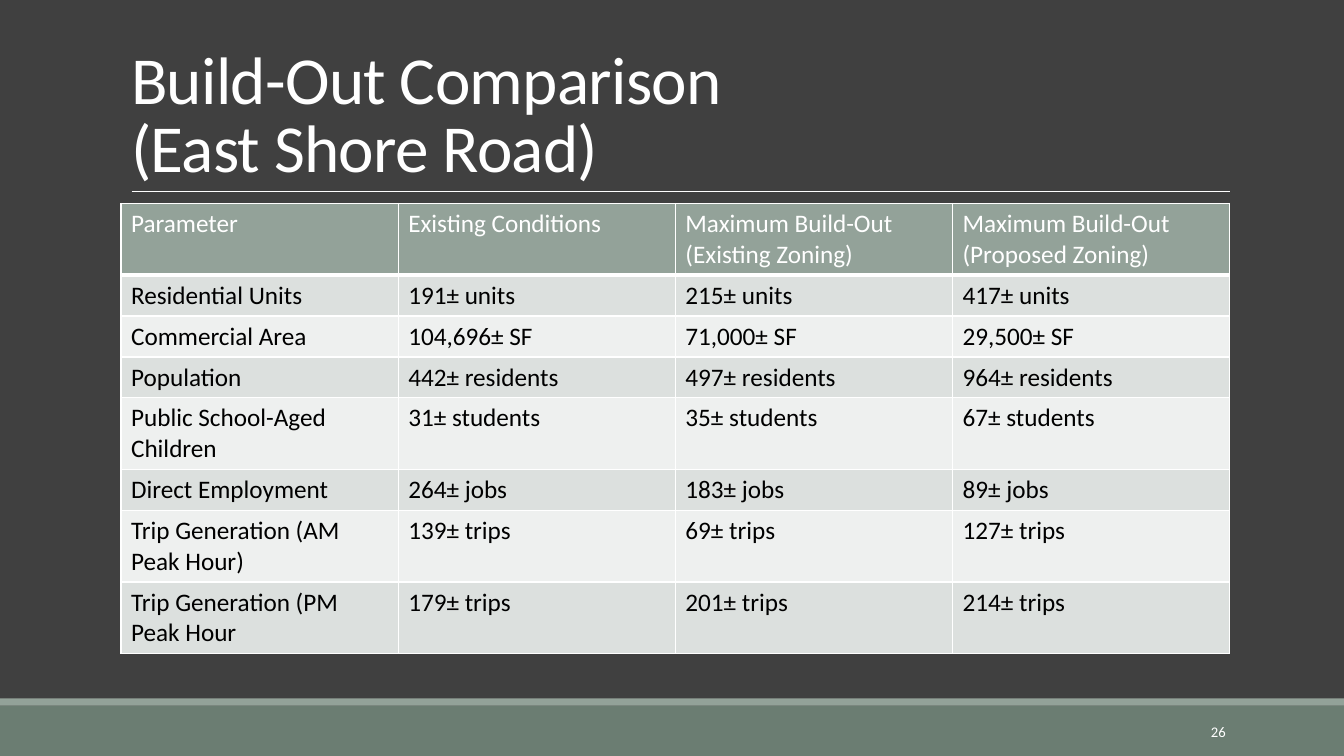
from dataclasses import dataclass

from lxml.etree import SubElement
from pptx import Presentation
from pptx.dml.color import RGBColor
from pptx.enum.shapes import MSO_CONNECTOR, MSO_SHAPE
from pptx.enum.text import MSO_ANCHOR, MSO_AUTO_SIZE, PP_ALIGN
from pptx.oxml.ns import qn
from pptx.slide import Slide
from pptx.table import _Cell
from pptx.text.text import TextFrame
from pptx.util import Cm, Pt

WHITE = "FFFFFF"
SAGE = "93A299"
BANDS = ["DCE0DE", "EEF0EF"]
LEFT, WIDTH = 3.05, 27.94


@dataclass
class Bar:
    top: float
    height: float
    fill: str


BARS = [Bar(17.78, 1.27, "6B7D72"), Bar(17.6, 0.18, SAGE)]

ROWS = [
    ["Parameter", "Existing Conditions", "Maximum Build-Out (Existing Zoning)",
     "Maximum Build-Out (Proposed Zoning)"],
    ["Residential Units", "191± units", "215± units", "417± units"],
    ["Commercial Area", "104,696± SF", "71,000± SF", "29,500± SF"],
    ["Population", "442± residents", "497± residents", "964± residents"],
    ["Public School-Aged Children", "31± students", "35± students", "67± students"],
    ["Direct Employment", "264± jobs", "183± jobs", "89± jobs"],
    ["Trip Generation (AM Peak Hour)", "139± trips", "69± trips", "127± trips"],
    ["Trip Generation (PM Peak Hour", "179± trips", "201± trips", "214± trips"],
]


def paint(target, tone: str) -> None:
    target.solid()
    target.fore_color.rgb = RGBColor.from_string(tone)


def write(frame: TextFrame, text: str, size: float = 18, tone: str = WHITE,
          align=PP_ALIGN.LEFT, space: float = 1, track: int = 0) -> None:
    frame.word_wrap = True
    para = frame.paragraphs[0]
    para.text = text
    para.alignment = align
    para.line_spacing = space
    for run in para.runs:
        run.font.name = "Calibri"
        run.font.size = Pt(size)
        run.font.bold = False
        paint(run.font.fill, tone)
        if track:
            run.font._element.set("spc", str(track))


def draw_bar(slide: Slide, bar: Bar, width: int) -> None:
    shape = slide.shapes.add_shape(
        MSO_SHAPE.RECTANGLE, 0, Cm(bar.top), width, Cm(bar.height))
    shape.shadow.inherit = False
    paint(shape.fill, bar.fill)
    shape.line.fill.background()


def draw_rule(slide: Slide) -> None:
    rule = slide.shapes.add_connector(
        MSO_CONNECTOR.STRAIGHT, Cm(3.32), Cm(4.82), Cm(31), Cm(4.82))
    paint(rule.line.fill, WHITE)
    rule.line.width = Pt(0.5)
    SubElement(rule._element.spPr, qn("a:effectLst"))


def edge(cell: _Cell, base: float) -> None:
    props = cell._tc.get_or_add_tcPr()
    widths = {"lnL": 1, "lnR": 1, "lnT": 1, "lnB": base}
    for spot, (tag, width) in enumerate(widths.items()):
        line = SubElement(props, qn(f"a:{tag}"), w=str(Pt(width)))
        fill = SubElement(line, qn("a:solidFill"))
        SubElement(fill, qn("a:srgbClr"), val=WHITE)
        props.insert(spot, line)


def draw_table(slide: Slide) -> None:
    count = len(ROWS[0])
    table = slide.shapes.add_table(
        len(ROWS), count, Cm(LEFT), Cm(5.13), Cm(WIDTH), Cm(1.03 * len(ROWS))).table
    for col in table.columns:
        col.width = Cm(WIDTH / count)
    for i, row in enumerate(ROWS):
        for j, text in enumerate(row):
            cell = table.cell(i, j)
            head = i == 0
            write(cell.text_frame, text, tone=WHITE if head else "000000")
            paint(cell.fill, SAGE if head else BANDS[(i - 1) % 2])
            edge(cell, 3 if head else 1)


def main() -> None:
    deck = Presentation()
    deck.slide_width, deck.slide_height = Cm(33.87), Cm(19.05)
    slide = deck.slides.add_slide(deck.slide_layouts[5])
    paint(slide.background.fill, "404040")
    for bar in BARS:
        draw_bar(slide, bar, deck.slide_width)
    draw_rule(slide)

    title = slide.shapes.title
    title.left, title.top = Cm(LEFT), Cm(0.79)
    title.width, title.height = Cm(WIDTH), Cm(4.04)
    frame = title.text_frame
    frame.auto_size = MSO_AUTO_SIZE.NONE
    frame.vertical_anchor = MSO_ANCHOR.BOTTOM
    write(frame, "Build-Out Comparison\v(East Shore Road)",
          size=48, space=0.85, track=-50)

    draw_table(slide)

    page = slide.shapes.add_textbox(Cm(27.51), Cm(17.93), Cm(3.63), Cm(1.02))
    page.text_frame.vertical_anchor = MSO_ANCHOR.MIDDLE
    write(page.text_frame, "26", size=10.5, align=PP_ALIGN.RIGHT)

    deck.save("out.pptx")


if __name__ == "__main__":
    main()
